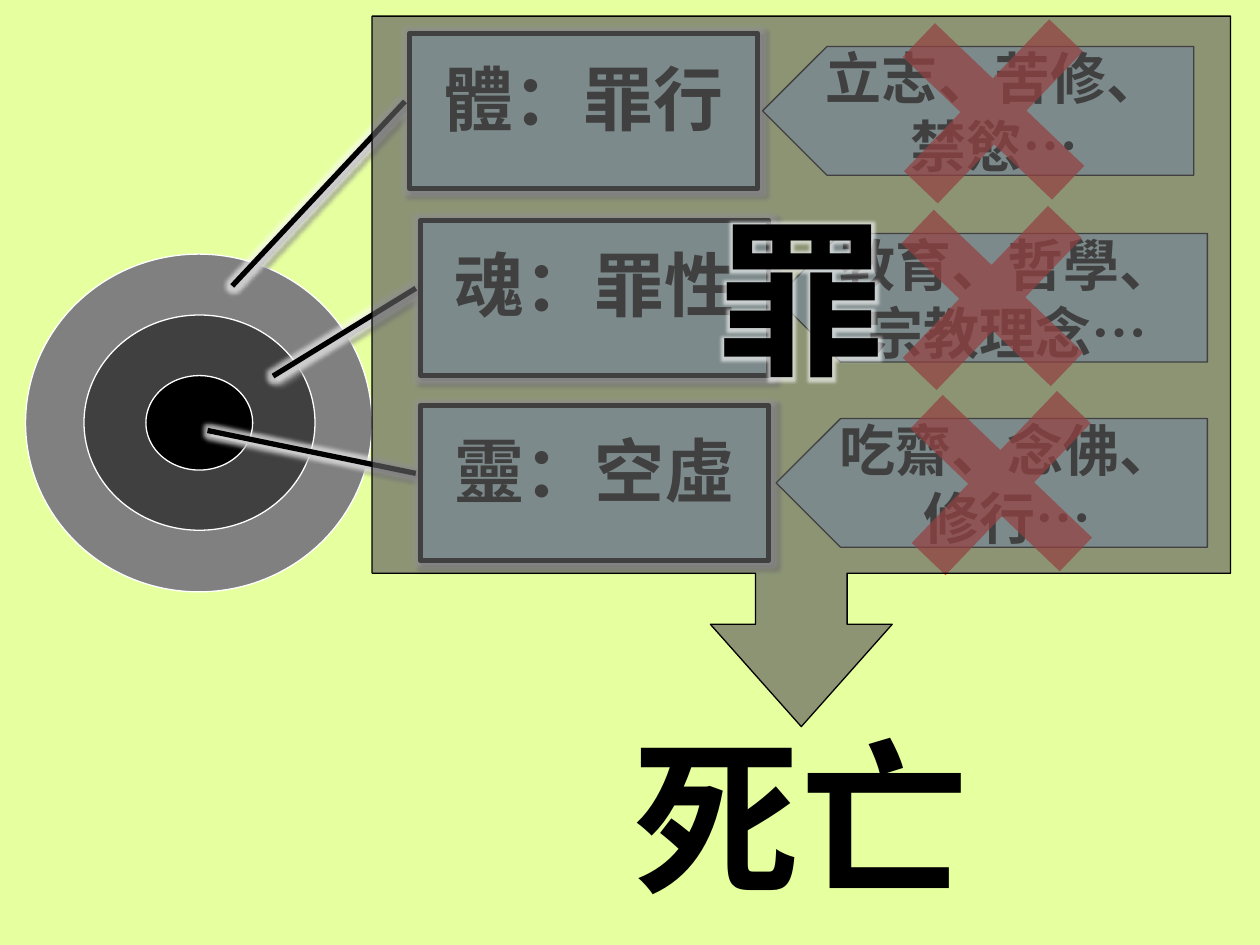
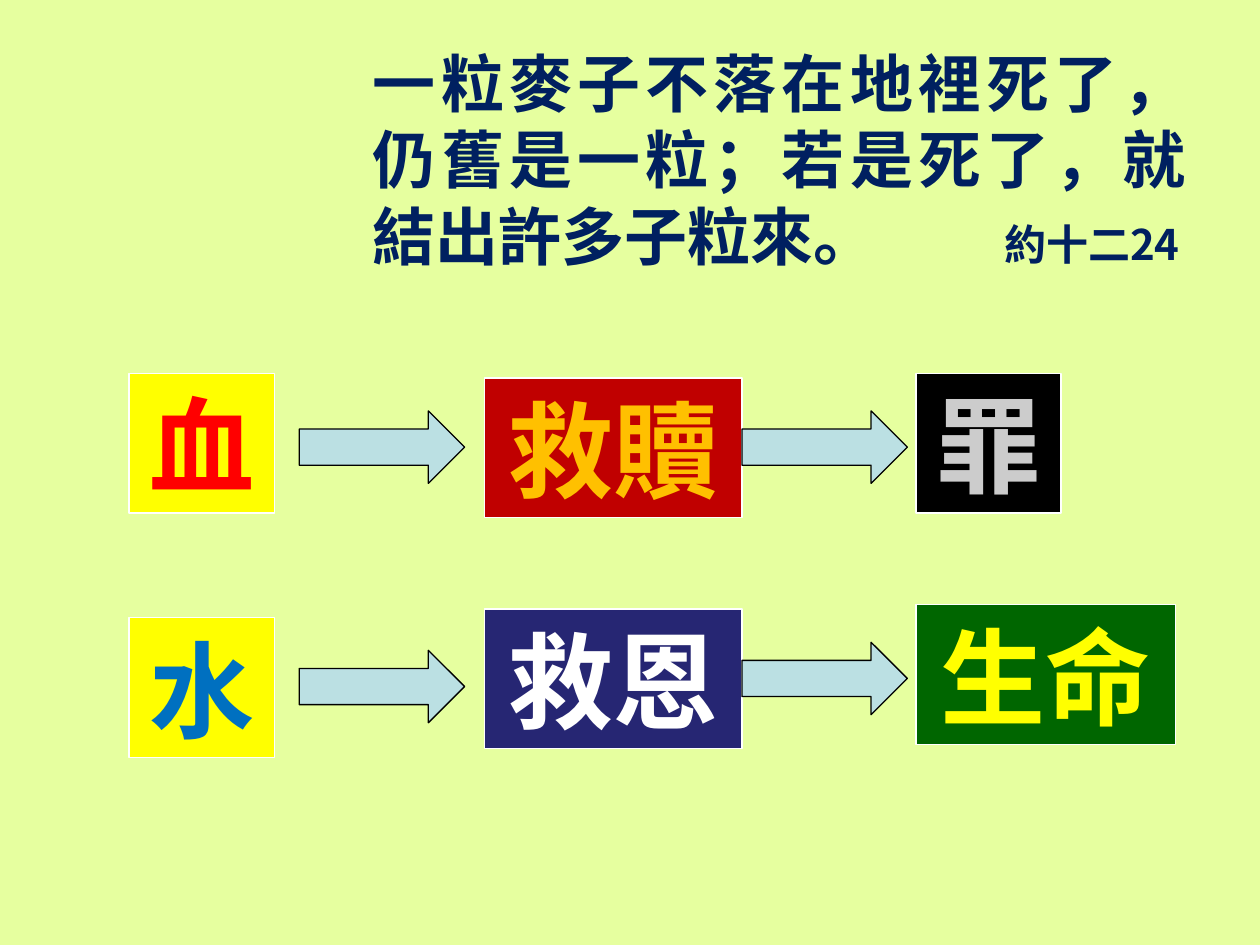
from lxml import etree
from pptx import Presentation
from pptx.dml.color import RGBColor
from pptx.enum.shapes import MSO_SHAPE
from pptx.enum.text import MSO_ANCHOR, PP_ALIGN
from pptx.oxml.ns import qn
from pptx.util import Pt

FONT = "Noto Sans CJK SC"
LINE_FACTOR = 1.21
COLOURS = {
    "lime": "E6FF9F", "grey": "808080", "charcoal": "404040", "black": "000000",
    "white": "FFFFFF", "ice": "BBE0E3", "red": "FF0000", "smoke": "606060",
    "navy": "002060", "yellow": "FFFF00", "blue": "0070C0", "crimson": "C00000",
    "gold": "FFC000", "silver": "CCCCCC", "indigo": "262673", "green": "006600",
}


def add_text(box, text, size, colour, align=PP_ALIGN.CENTER, anchor=MSO_ANCHOR.TOP,
             spacing=None, before=0, tail="", tail_size=None, tab=None):
    frame = box.text_frame
    frame.word_wrap = True
    frame.vertical_anchor = anchor
    para = frame.paragraphs[0]
    para.alignment = align
    para.line_spacing = Pt(spacing or round(size * LINE_FACTOR, 1))
    para.space_before = Pt(before)
    if tab:
        stops = etree.SubElement(para._p.get_or_add_pPr(), qn("a:tabLst"))
        etree.SubElement(stops, qn("a:tab"), pos=str(Pt(tab)), algn="r")
    for words, points in ((text, size), (tail, tail_size)):
        if words:
            span = para.add_run()
            span.text = words
            span.font.size = Pt(points)
            span.font.bold = True
            span.font.name = FONT
            span.font.color.rgb = RGBColor.from_string(COLOURS[colour])
            etree.SubElement(span._r.get_or_add_rPr(), qn("a:ea"), typeface=FONT)
    return span


def add_shape(page, kind, at, fill, line=None, width=0.75, adjust=(), alpha=None):
    shape = page.shapes.add_shape(kind, *[Pt(length) for length in at])
    shape.shadow.inherit = False
    shape.fill.solid()
    shape.fill.fore_color.rgb = RGBColor.from_string(COLOURS[fill])
    if alpha:
        colour = shape._element.spPr.find(qn("a:solidFill"))[0]
        etree.SubElement(colour, qn("a:alpha"), val=str(alpha * 1000))
    if line:
        shape.line.color.rgb = RGBColor.from_string(COLOURS[line])
        shape.line.width = Pt(width)
    else:
        shape.line.fill.background()
    for index, value in enumerate(adjust):
        shape.adjustments[index] = value
    return shape


deck = Presentation()
deck.slide_width, deck.slide_height = Pt(720), Pt(540)
pages = [deck.slides.add_slide(deck.slide_layouts[6]) for _ in range(2)]
for page in pages:
    page.background.fill.solid()
    page.background.fill.fore_color.rgb = RGBColor.from_string(COLOURS["lime"])
sin_page, grace_page = pages

for at, fill in [((14.6, 145.2, 198, 193), "grey"),
                 ((48, 180, 132, 123), "charcoal"),
                 ((83.4, 214.6, 61, 54), "black")]:
    add_shape(sin_page, MSO_SHAPE.OVAL, at, fill, "white")

layers = [
    ("體：罪行", 234, 19.2, (1.63, -0.509)),
    ("魂：罪性", 240.2, 126, (1.005, -0.423)),
    ("靈：空虛", 240.2, 231.8, (0.161, -0.611)),
]
for text, left, top, pointer in layers:
    callout = add_shape(sin_page, MSO_SHAPE.LINE_CALLOUT_1, (left, top, 199, 88.5),
                        "ice", "black", 3, (0.438, -0.013, *pointer))
    effects = callout._element.spPr.find(qn("a:effectLst"))
    glow = etree.SubElement(effects, qn("a:glow"), rad=str(Pt(5)))
    glow_colour = etree.SubElement(glow, qn("a:srgbClr"), val=COLOURS["white"])
    etree.SubElement(glow_colour, qn("a:alpha"), val="60000")
    shadow = etree.SubElement(effects, qn("a:outerShdw"), dist=str(Pt(2.8)),
                              dir="2700000", algn="ctr", rotWithShape="0")
    etree.SubElement(shadow, qn("a:srgbClr"), val=COLOURS["grey"])
    add_text(callout, text, 40, "black", anchor=MSO_ANCHOR.MIDDLE, spacing=32)

efforts = [
    ("立志、苦修、禁慾…", 435.8, 26.6, 487.4, -18),
    ("教育、哲學、宗教理念…", 443.6, 133.4, 486.7, 88.6),
    ("吃齋、念佛、修行…", 443.6, 239.2, 491.8, 194.4),
]
for text, left, top, cross_left, cross_top in efforts:
    effort = add_shape(sin_page, MSO_SHAPE.PENTAGON, (left, top, 246.4, 73.5), "ice", "black")
    effort._element.spPr.find(qn("a:xfrm")).set("flipH", "1")
    add_text(effort, text, 32, "black", anchor=MSO_ANCHOR.MIDDLE)
    cross = add_shape(sin_page, MSO_SHAPE.MATH_PLUS, (cross_left, cross_top, 160.6, 163.4),
                      "red", adjust=(0.166,), alpha=71)
    cross.rotation = 43.7

veil = add_shape(sin_page, MSO_SHAPE.DOWN_ARROW_CALLOUT, (212.6, 9.2, 490.6, 406),
                 "smoke", "black", adjust=(0.129, 0.128, 0.144, 0.784), alpha=67)
span = add_text(veil, "罪", 96, "black", anchor=MSO_ANCHOR.MIDDLE)
effects = etree.Element(qn("a:effectLst"))
glow = etree.SubElement(effects, qn("a:glow"), rad=str(Pt(5)))
glow_colour = etree.SubElement(glow, qn("a:srgbClr"), val=COLOURS["white"])
etree.SubElement(glow_colour, qn("a:alpha"), val="60000")
span._r.rPr.find(qn("a:solidFill")).addnext(effects)

death = sin_page.shapes.add_textbox(Pt(327), Pt(403.2), Pt(261.4), Pt(123.8))
add_text(death, "死亡", 96, "black")

verse = grace_page.shapes.add_textbox(Pt(206), Pt(21.6), Pt(478.8), Pt(138.2))
add_text(verse, "一粒麥子不落在地裡死了，仍舊是一粒；若是死了，就結出許多子粒來。", 36, "navy",
         align=PP_ALIGN.JUSTIFY, tail="\t約十二24", tail_size=24, tab=461)

tiles = [
    ("水", 73.8, 353, 83, "yellow", "blue"),
    ("血", 73.8, 213.4, 83, "yellow", "red"),
    ("救贖", 277, 216, 147, "crimson", "gold"),
    ("罪", 523.4, 213.4, 83, "black", "silver"),
    ("救恩", 277, 348, 147, "indigo", "white"),
    ("生命", 523.4, 345.6, 148.3, "green", "yellow"),
]
for text, left, top, width, fill, colour in tiles:
    tile = add_shape(grace_page, MSO_SHAPE.RECTANGLE, (left, top, width, 79.8), fill, "white")
    add_text(tile, text, 60, colour)

for left, top in [(171, 234.8), (171, 371.6), (424, 234.8), (424, 367)]:
    add_shape(grace_page, MSO_SHAPE.RIGHT_ARROW, (left, top, 94.5, 41.4), "ice", "black")

deck.save("out.pptx")
